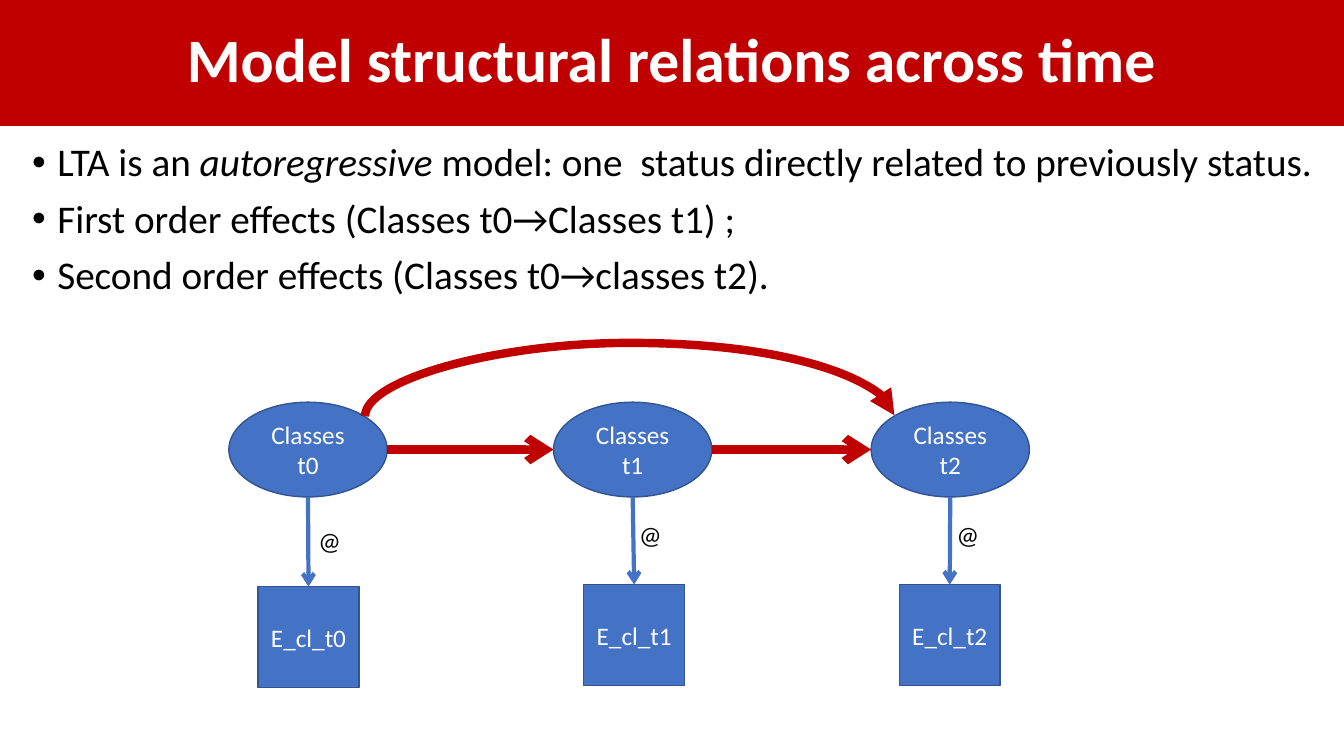
from lxml import etree
from pptx import Presentation
from pptx.dml.color import RGBColor
from pptx.enum.shapes import MSO_CONNECTOR, MSO_SHAPE
from pptx.enum.text import MSO_ANCHOR, MSO_AUTO_SIZE, PP_ALIGN
from pptx.oxml.ns import qn
from pptx.util import Inches, Pt

RED = RGBColor(0xC0, 0x00, 0x00)
BLUE = RGBColor(0x44, 0x72, 0xC4)
DARK_BLUE = RGBColor(0x32, 0x54, 0x91)
WHITE = RGBColor(0xFF, 0xFF, 0xFF)
BLACK = RGBColor(0x00, 0x00, 0x00)
STRAIGHT, CURVE = MSO_CONNECTOR.STRAIGHT, MSO_CONNECTOR.CURVE
ELLIPSE, RECTANGLE = MSO_SHAPE.OVAL, MSO_SHAPE.RECTANGLE
MIDDLE, CENTER = MSO_ANCHOR.MIDDLE, PP_ALIGN.CENTER

NODE_W, NODE_H, NODE_TOP = 1.57, 0.94, 3.99
NODE_MID = NODE_TOP + NODE_H / 2
BOX_SIZE = 1

prs = Presentation()
prs.slide_width, prs.slide_height = Inches(13.33), Inches(7.5)
slide = prs.slides.add_slide(prs.slide_layouts[5])
shapes = slide.shapes


def style_text(frame, size, color, align=None):
    for paragraph in frame.paragraphs:
        paragraph.alignment = align
        for run in paragraph.runs:
            run.font.name = "Calibri"
            run.font.size = Pt(size)
            run.font.color.rgb = color


def add_arrow(kind, start, end, color, width, head="arrow"):
    """Draw a shadowless connector with an arrowhead at its end."""
    arrow = shapes.add_connector(kind, *map(Inches, start + end))
    arrow.line.color.rgb = color
    arrow.line.width = Pt(width)
    etree.SubElement(arrow.line._get_or_add_ln(), qn("a:tailEnd"), type=head)
    etree.SubElement(arrow._element.spPr, qn("a:effectLst"))
    return arrow


# Title band
title = shapes.title
title.left, title.top = Inches(0), Inches(0)
title.width, title.height = Inches(13.33), Inches(1.25)
title.fill.solid()
title.fill.fore_color.rgb = RED
title.text_frame.text = "Model structural relations across time"
title.text_frame.vertical_anchor = MIDDLE
style_text(title.text_frame, 44, WHITE, CENTER)
title.text_frame.paragraphs[0].line_spacing = 0.9
title.text_frame.paragraphs[0].runs[0].font.bold = True

# Bullets, each a list of (text, italic) runs
bullets = [
    [("LTA is an ", False), ("autoregressive", True),
     (" model: one  status directly related to previously status.", False)],
    [("First order effects (Classes t0→Classes t1) ;", False)],
    [("Second order effects (Classes t0→classes t2).", False)],
]
body = shapes.add_textbox(Inches(0.22), Inches(1.37), Inches(13.13), Inches(4.95)).text_frame
body.word_wrap = True
for index, parts in enumerate(bullets):
    paragraph = body.add_paragraph() if index else body.paragraphs[0]
    paragraph.line_spacing = 0.9
    paragraph.space_before = Pt(10)
    for text, italic in parts:
        run = paragraph.add_run()
        run.text = text
        run.font.italic = italic
    properties = paragraph._p.get_or_add_pPr()
    properties.set("marL", str(Inches(0.25)))
    properties.set("indent", str(Inches(-0.25)))
    etree.SubElement(properties, qn("a:buFont"), typeface="Arial")
    etree.SubElement(properties, qn("a:buChar"), char="•")
style_text(body, 28, BLACK)

# One latent class node, indicator box and fixed-path label per time point
times = [
    # node text, node left, box text, box left, box top, label left, label top
    ("Classes\nt0", 2.27, "E_cl_t0", 2.56, 5.82, 3.06, 5.16),
    ("Classes t1", 5.49, "E_cl_t1", 5.79, 5.8, 6.24, 5.1),
    ("Classes t2", 8.64, "E_cl_t2", 8.92, 5.8, 9.39, 5.1),
]
for node_text, node_left, box_text, box_left, box_top, label_left, label_top in times:
    for kind, text, left, top, width, height in (
        (ELLIPSE, node_text, node_left, NODE_TOP, NODE_W, NODE_H),
        (RECTANGLE, box_text, box_left, box_top, BOX_SIZE, BOX_SIZE),
    ):
        item = shapes.add_shape(kind, Inches(left), Inches(top), Inches(width), Inches(height))
        item.shadow.inherit = False
        item.fill.solid()
        item.fill.fore_color.rgb = BLUE
        item.line.color.rgb = DARK_BLUE
        item.line.width = Pt(1)
        item.text_frame.text = text
        item.text_frame.vertical_anchor = MIDDLE
        style_text(item.text_frame, 18, WHITE, CENTER)

    path = add_arrow(STRAIGHT, (node_left + NODE_W / 2, NODE_TOP + NODE_H),
                     (box_left + BOX_SIZE / 2, box_top), BLUE, 3)
    path.end_connect(item, 0)

    label = shapes.add_textbox(Inches(label_left), Inches(label_top), Inches(0.43), Inches(0.4))
    label.text_frame.text = "@"
    label.text_frame.word_wrap = False
    label.text_frame.auto_size = MSO_AUTO_SIZE.SHAPE_TO_FIT_TEXT
    style_text(label.text_frame, 18, BLACK)

# First order effects
for earlier, later in zip(times, times[1:]):
    add_arrow(STRAIGHT, (earlier[1] + NODE_W, NODE_MID), (later[1], NODE_MID), RED, 6)

# Second order effect: a vertical curve turned a quarter, bulging 0.74 inch upwards
arc = add_arrow(CURVE, (6.25, 6.75), (6.24, 1.5), RED, 6, "triangle")
arc_properties = arc._element.spPr
arc_properties.find(qn("a:xfrm")).set("rot", "5400000")
adjustments = arc_properties.find(qn("a:prstGeom")).find(qn("a:avLst"))
etree.SubElement(adjustments, qn("a:gd"), name="adj1", fmla="val 7400000")

prs.save("out.pptx")
